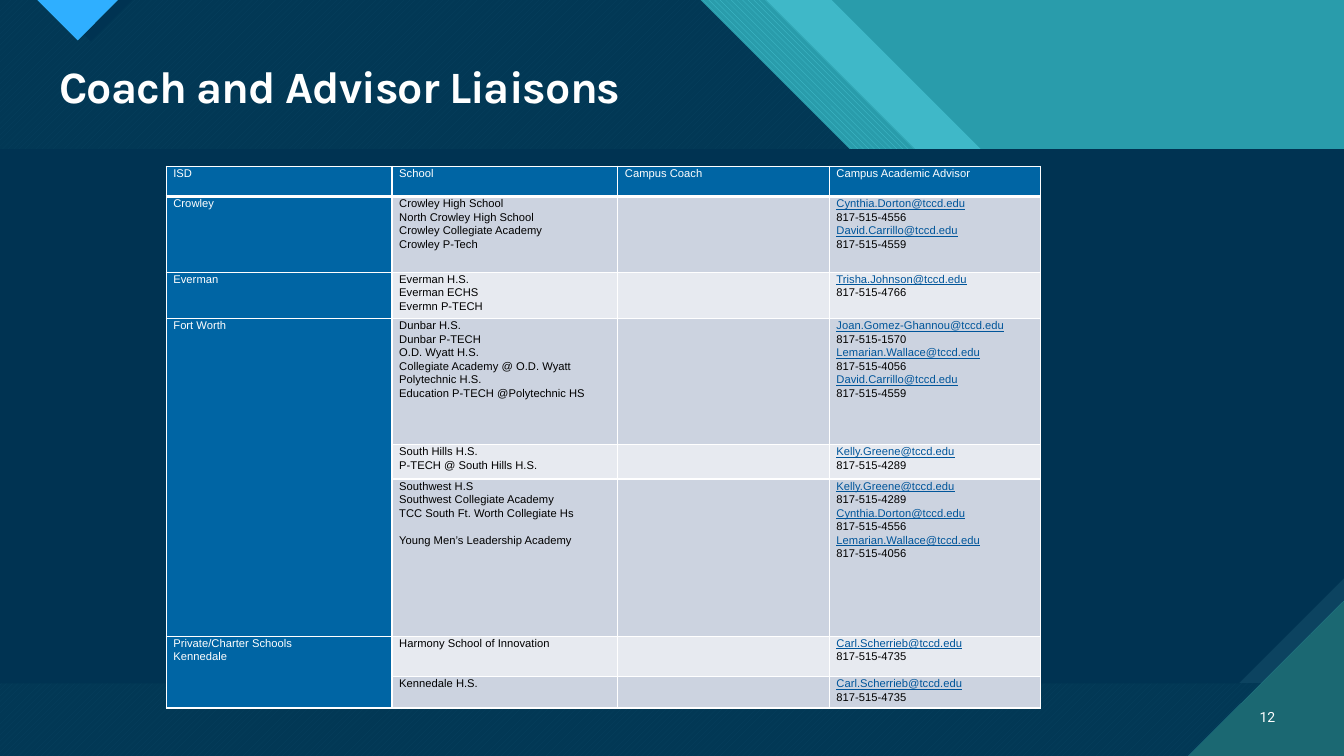
from dataclasses import dataclass
from typing import Optional

from lxml.etree import SubElement
from pptx import Presentation
from pptx.dml.color import RGBColor
from pptx.dml.fill import FillFormat
from pptx.enum.dml import MSO_PATTERN
from pptx.enum.text import MSO_ANCHOR, MSO_AUTO_SIZE, PP_ALIGN
from pptx.oxml.ns import qn
from pptx.util import Cm, Pt

W, H = 33.87, 19.05
BAND_TOP, BAND_BOTTOM = 3.76, 17.22
WHITE, BLACK, NAVY, BLUE, LINK = "FFFFFF", "000000", "003352", "0065A4", "00559A"
TEAL, AQUA, PINE = "299CAB", "47C3D3", "1B6872"
ROW_FILLS = ("E7EAF0", "CCD3E0")


@dataclass
class Panel:
    points: list
    color: str
    back: str = PINE
    pattern: Optional[MSO_PATTERN] = None
    alpha: int = 100


@dataclass
class SchoolRow:
    height: float
    isd: str
    schools: list
    advisors: list
    span: int = 1


def sweep(x: float) -> list:
    """Outline of a layer whose diagonal edge starts at x on the top edge."""
    notch, step = 7.54, 10.75
    return [(0, 0), (x, 0), (x + notch, notch), (x + step, notch),
            (W, notch + W - x - step), (W, H), (0, H)]


SNIP = 2.65
BAND = [(0, BAND_TOP), (W, BAND_TOP), (W, BAND_BOTTOM), (0, BAND_BOTTOM)]
SNIPPED_BAND = [*BAND[:2], (W, BAND_BOTTOM - SNIP), (W - SNIP, BAND_BOTTOM), BAND[3]]
PANELS = [
    Panel(sweep(20.96), AQUA, alpha=74),
    Panel(sweep(19.3), AQUA, TEAL, MSO_PATTERN.WIDE_DOWNWARD_DIAGONAL),
    Panel(sweep(17.65), AQUA, PINE, MSO_PATTERN.WIDE_UPWARD_DIAGONAL),
    Panel(sweep(17.65), NAVY, alpha=90),
    Panel([(1.22, 0), (3.33, 0), (2.29, 1.04)], NAVY),
    Panel([(0.94, 0), (2.97, 0), (1.96, 1.02)], "2FAFFF", PINE, MSO_PATTERN.DARK_HORIZONTAL),
    Panel(BAND, "0C4360", PINE, MSO_PATTERN.DARK_VERTICAL),
    Panel(SNIPPED_BAND, NAVY),
    Panel([(29.95, H), (W, H), (W, 15.14)], PINE, AQUA, MSO_PATTERN.DARK_HORIZONTAL),
]

PHONES = {
    "Cynthia.Dorton": "4556", "David.Carrillo": "4559", "Trisha.Johnson": "4766",
    "Joan.Gomez-Ghannou": "1570", "Lemarian.Wallace": "4056",
    "Kelly.Greene": "4289", "Carl.Scherrieb": "4735",
}
HEADINGS = ["ISD", "School", "Campus Coach", "Campus Academic Advisor"]
HEADER_HEIGHT = 0.76
COL_WIDTHS = [5.69, 5.69, 5.33, 5.33]
# An empty school name leaves a gap of one line
ROWS = [
    SchoolRow(1.91, "Crowley",
              ["Crowley High School", "North Crowley High School",
               "Crowley Collegiate Academy", "Crowley P-Tech"],
              ["Cynthia.Dorton", "David.Carrillo"]),
    SchoolRow(1.17, "Everman", ["Everman H.S.", "Everman ECHS", "Evermn P-TECH"],
              ["Trisha.Johnson"]),
    SchoolRow(3.18, "Fort Worth",
              ["Dunbar H.S.", "Dunbar P-TECH", "O.D. Wyatt H.S.",
               "Collegiate Academy @ O.D. Wyatt", "Polytechnic H.S.",
               "Education P-TECH @Polytechnic HS"],
              ["Joan.Gomez-Ghannou", "Lemarian.Wallace", "David.Carrillo"], span=3),
    SchoolRow(0.86, "", ["South Hills H.S.", "P-TECH @ South Hills H.S."], ["Kelly.Greene"]),
    SchoolRow(3.96, "",
              ["Southwest H.S", "Southwest Collegiate Academy",
               "TCC South Ft. Worth Collegiate Hs", "", "Young Men’s Leadership Academy"],
              ["Kelly.Greene", "Cynthia.Dorton", "Lemarian.Wallace"]),
    SchoolRow(1.02, "Private/Charter Schools\nKennedale", ["Harmony School of Innovation"],
              ["Carl.Scherrieb"], span=2),
    SchoolRow(0.79, "", ["Kennedale H.S."], ["Carl.Scherrieb"]),
]


def rgb(color: str) -> RGBColor:
    return RGBColor.from_string(color)


def apply(target, **values) -> None:
    for name, value in values.items():
        setattr(target, name, value)


def paint(fill: FillFormat, color: str) -> None:
    fill.solid()
    fill.fore_color.rgb = rgb(color)


def add_run(p, text: str, font: str, size: float, color: str, **values):
    r = p.add_run()
    r.text = text
    apply(r.font, name=font, size=Pt(size), **values)
    r.font.color.rgb = rgb(color)
    return r


def draw_panel(s, panel: Panel) -> None:
    points = [(Cm(x), Cm(y)) for x, y in panel.points]
    builder = s.shapes.build_freeform(*points[0])
    builder.add_line_segments(points[1:], close=True)
    sp = builder.convert_to_shape()
    sp.shadow.inherit = False
    sp.line.fill.background()
    if panel.pattern is None:
        paint(sp.fill, panel.color)
    else:
        sp.fill.patterned()
        sp.fill.pattern = panel.pattern
        sp.fill.fore_color.rgb = rgb(panel.color)
        sp.fill.back_color.rgb = rgb(panel.back)
    if panel.alpha < 100:
        color = sp.element.spPr.find(qn("a:solidFill"))[0]
        SubElement(color, qn("a:alpha")).set("val", str(panel.alpha * 1000))


def format_cell(cell, fill: str, bottom: float = 1) -> None:
    apply(cell, margin_left=Cm(0.18), margin_right=Cm(0.18), margin_top=0, margin_bottom=0)
    tc_pr = cell._tc.get_or_add_tcPr()
    for side, width in {"L": 1, "R": 1, "T": 1, "B": bottom}.items():
        ln = SubElement(tc_pr, qn(f"a:ln{side}"), w=str(Pt(width)))
        solid = SubElement(ln, qn("a:solidFill"))
        SubElement(solid, qn("a:srgbClr")).set("val", WHITE)
    paint(cell.fill, fill)


def write_lines(cell, lines: list, color: str) -> None:
    tf = cell.text_frame
    p, gap = tf.paragraphs[0], 0.0
    for i, line in enumerate(lines):
        if not line:
            gap = 9.6
            continue
        if i:
            p = tf.add_paragraph()
        p.line_spacing = 1.07
        if gap:
            p.space_before, gap = Pt(gap), 0.0
        is_mail = line.endswith(".edu")
        add_run(p, line, "Arial", 8, LINK if is_mail else color, underline=is_mail)


def add_liaison_table(s) -> None:
    heights = [HEADER_HEIGHT, *(row.height for row in ROWS)]
    frame = s.shapes.add_table(len(heights), len(COL_WIDTHS), Cm(4.19), Cm(4.19),
                               Cm(sum(COL_WIDTHS)), Cm(sum(heights)))
    table = frame.table
    apply(table, first_row=False, horz_banding=False)
    for col, width in zip(table.columns, COL_WIDTHS):
        col.width = Cm(width)
    for row, height in zip(table.rows, heights):
        row.height = Cm(height)

    for c, heading in enumerate(HEADINGS):
        format_cell(table.cell(0, c), BLUE, bottom=3)
        write_lines(table.cell(0, c), [heading], WHITE)
    for n, row in enumerate(ROWS, start=1):
        cells = [table.cell(n, c) for c in range(len(HEADINGS))]
        for c, cell in enumerate(cells):
            format_cell(cell, ROW_FILLS[n % 2] if c else BLUE)
        contacts = [line for name in row.advisors
                    for line in (f"{name}@tccd.edu", f"817-515-{PHONES[name]}")]
        write_lines(cells[0], row.isd.split("\n"), WHITE)
        write_lines(cells[1], row.schools, BLACK)
        write_lines(cells[3], contacts, BLACK)
        if row.span > 1:
            cells[0].merge(table.cell(n + row.span - 1, 0))


def main() -> None:
    prs = Presentation()
    apply(prs, slide_width=Cm(W), slide_height=Cm(H))
    s = prs.slides.add_slide(prs.slide_layouts[5])

    # Background
    paint(s.background.fill, TEAL)
    for panel in PANELS:
        draw_panel(s, panel)

    # Title, brought in front of the background
    title = s.shapes.title
    title.element.getparent().append(title.element)
    apply(title, left=Cm(1.24), top=Cm(1.5), width=Cm(31.14), height=Cm(1.5))
    apply(title.text_frame, auto_size=MSO_AUTO_SIZE.NONE, word_wrap=True,
          vertical_anchor=MSO_ANCHOR.MIDDLE)
    p = title.text_frame.paragraphs[0]
    apply(p, alignment=PP_ALIGN.LEFT, line_spacing=0.9)
    r = add_run(p, "Coach and Advisor Liaisons", "Karla", 32, WHITE, bold=True)
    r.font._element.set("spc", "-70")

    # Liaison table
    add_liaison_table(s)

    # Page number
    tf = s.shapes.add_textbox(Cm(31.27), Cm(17.55), Cm(1.12), Cm(1.02)).text_frame
    apply(tf, word_wrap=True, vertical_anchor=MSO_ANCHOR.MIDDLE)
    p = tf.paragraphs[0]
    p.alignment = PP_ALIGN.RIGHT
    add_run(p, "12", "Roboto", 10, WHITE)

    prs.save("out.pptx")


if __name__ == "__main__":
    main()
